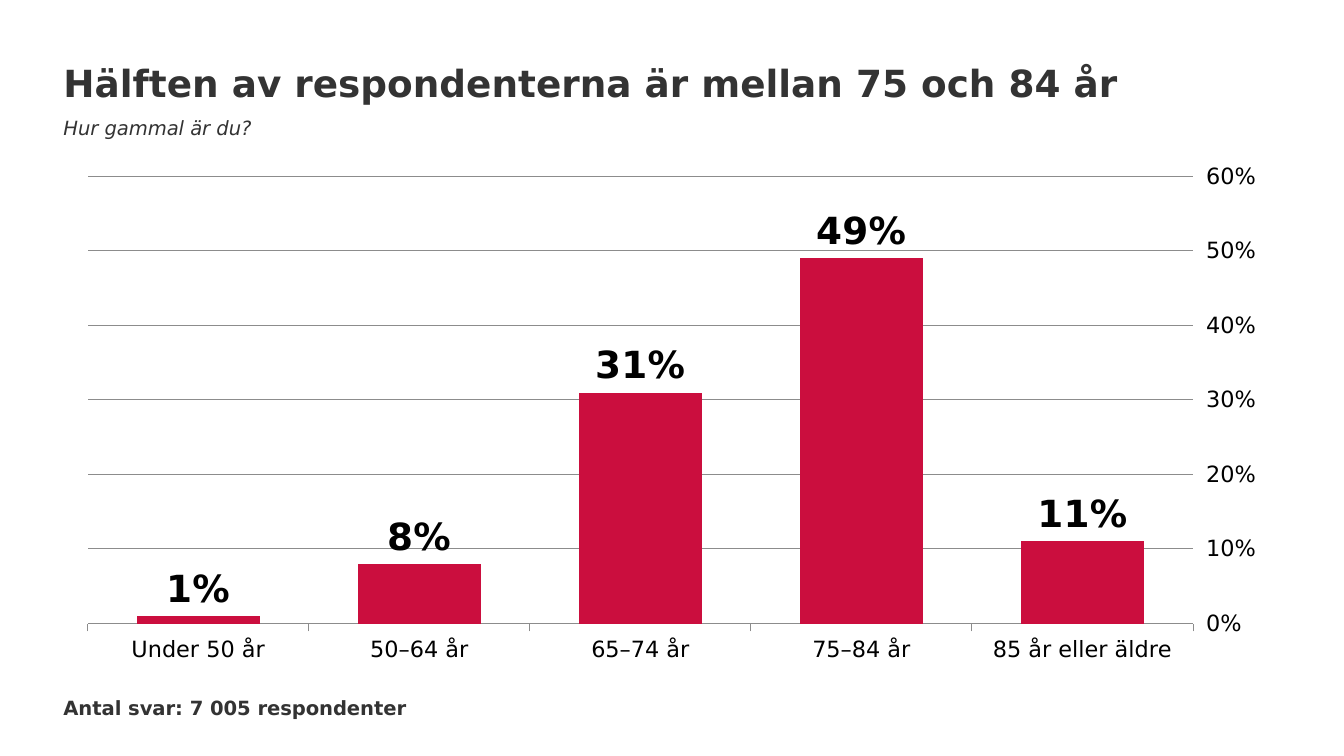
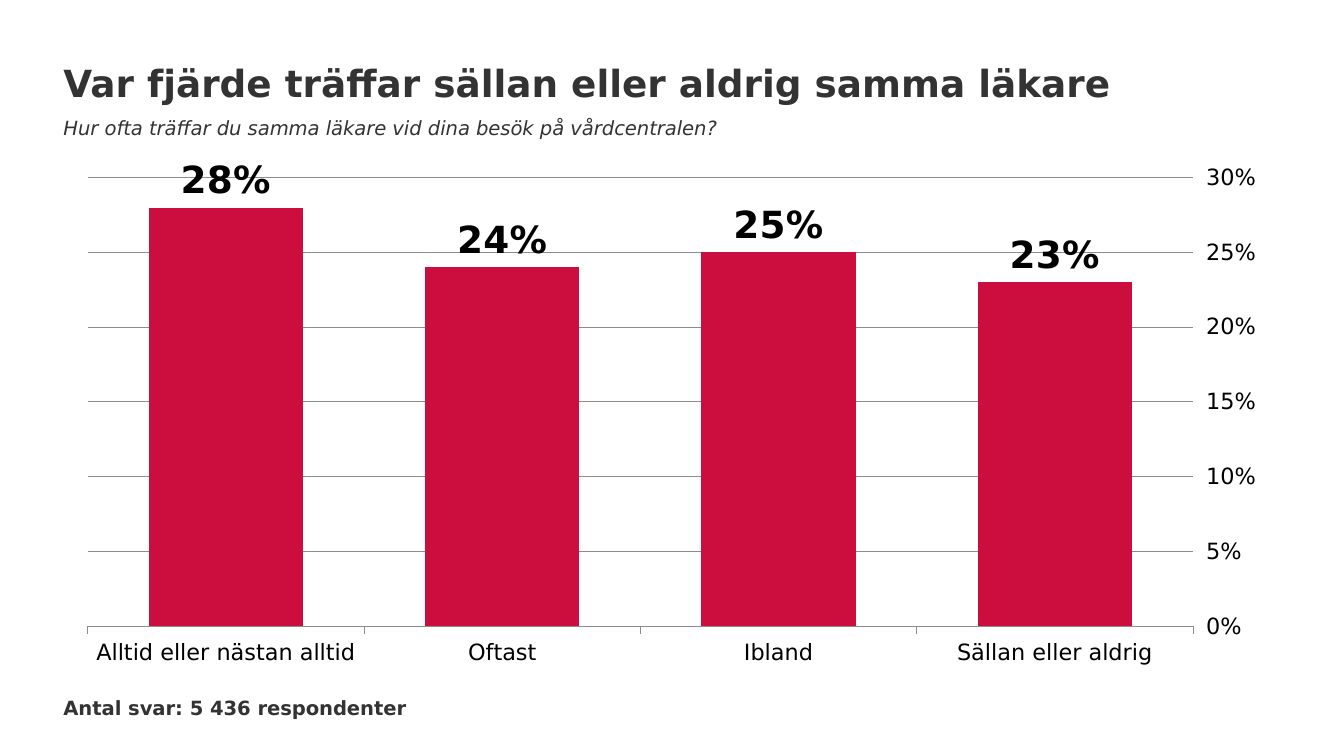
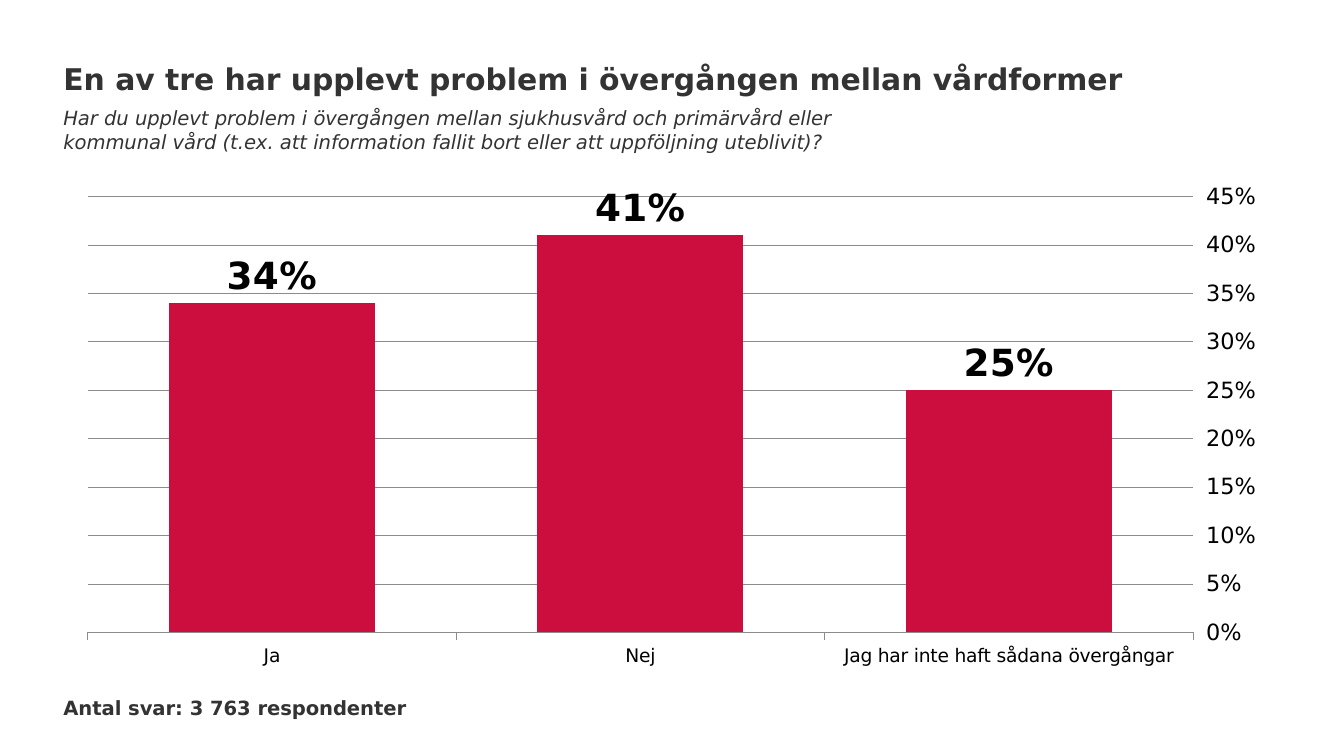
from dataclasses import dataclass

from pptx import Presentation
from pptx.chart.data import CategoryChartData
from pptx.dml.color import RGBColor
from pptx.enum.chart import (XL_CHART_TYPE, XL_LABEL_POSITION,
                             XL_TICK_LABEL_POSITION, XL_TICK_MARK)
from pptx.enum.text import MSO_ANCHOR, MSO_AUTO_SIZE, PP_ALIGN
from pptx.slide import Slide
from pptx.text.text import Font
from pptx.util import Pt

FONT = "DejaVu Sans"
BLACK = RGBColor(0x00, 0x00, 0x00)
TEXT_GREY = RGBColor(0x33, 0x33, 0x33)
LINE_GREY = RGBColor(0x8C, 0x8C, 0x8C)
BAR_RED = RGBColor(0xCB, 0x0E, 0x3E)

LEFT = 34
CONTENT_WIDTH = 652
TITLE_TOP = 32.4
COUNT_TOP = 373
COUNT_WIDTH = 212
NOTE_SIZE = 10.5
LINE_HEIGHT = 12.6
PERCENT = "0%"


@dataclass(frozen=True)
class SurveyQuestion:
    headline: str
    question: str
    respondents: str
    answers: dict[str, float]
    chart_top: float
    chart_height: float
    headline_size: float = 20
    headline_height: float = 24.5
    question_top: float = 62
    question_width: float = CONTENT_WIDTH
    question_lines: int = 1
    answer_size: float = 12


QUESTIONS = [
    SurveyQuestion(
        "Hälften av respondenterna är mellan 75 och 84 år",
        "Hur gammal är du?",
        "7 005",
        {"Under 50 år": 0.01, "50–64 år": 0.08, "65–74 år": 0.31,
         "75–84 år": 0.49, "85 år eller äldre": 0.11},
        chart_top=81.8, chart_height=279.2,
    ),
    SurveyQuestion(
        "Var fjärde träffar sällan eller aldrig samma läkare",
        "Hur ofta träffar du samma läkare vid dina besök på vårdcentralen?",
        "5 436",
        {"Alltid eller nästan alltid": 0.28, "Oftast": 0.24,
         "Ibland": 0.25, "Sällan eller aldrig": 0.23},
        chart_top=82.5, chart_height=280,
    ),
    SurveyQuestion(
        "En av tre har upplevt problem i övergången mellan vårdformer",
        "Har du upplevt problem i övergången mellan sjukhusvård och primärvård "
        "eller kommunal vård (t.ex. att information fallit bort eller att "
        "uppföljning uteblivit)?",
        "3 763",
        {"Ja": 0.34, "Nej": 0.41, "Jag har inte haft sådana övergångar": 0.25},
        chart_top=92.8, chart_height=269.8,
        headline_size=16, headline_height=19.5,
        question_top=57, question_width=451.4, question_lines=2,
        answer_size=10,
    ),
]


def style_font(font: Font, size: float, color: RGBColor,
               bold: bool = False, italic: bool = False) -> None:
    font.name = FONT
    font.size = Pt(size)
    font.bold = bold
    font.italic = italic
    font.color.rgb = color


def write_text(holder, text: str, size: float,
               bold: bool = False, italic: bool = False) -> None:
    """Fill a text box or placeholder with one tight, left-aligned run."""
    frame = holder.text_frame
    frame.margin_left = frame.margin_top = 0
    frame.margin_right = frame.margin_bottom = 0
    frame.vertical_anchor = MSO_ANCHOR.TOP
    frame.word_wrap = True
    frame.auto_size = MSO_AUTO_SIZE.SHAPE_TO_FIT_TEXT
    paragraph = frame.paragraphs[0]
    paragraph.alignment = PP_ALIGN.LEFT
    run = paragraph.add_run()
    run.text = text
    style_font(run.font, size, TEXT_GREY, bold, italic)


def add_headline(slide: Slide, survey: SurveyQuestion) -> None:
    title = slide.shapes.title
    title.left, title.top = Pt(LEFT), Pt(TITLE_TOP)
    title.width, title.height = Pt(CONTENT_WIDTH), Pt(survey.headline_height)
    write_text(title, survey.headline, survey.headline_size, bold=True)


def add_note(slide: Slide, text: str, top: float, width: float, lines: int = 1,
             bold: bool = False, italic: bool = False) -> None:
    note = slide.shapes.add_textbox(Pt(LEFT), Pt(top), Pt(width), Pt(lines * LINE_HEIGHT))
    write_text(note, text, NOTE_SIZE, bold, italic)


def add_answer_chart(slide: Slide, survey: SurveyQuestion) -> None:
    data = CategoryChartData(number_format=PERCENT)
    data.categories = list(survey.answers)
    data.add_series("Series 1", list(survey.answers.values()))
    chart = slide.shapes.add_chart(
        XL_CHART_TYPE.COLUMN_CLUSTERED, Pt(LEFT), Pt(survey.chart_top),
        Pt(CONTENT_WIDTH), Pt(survey.chart_height), data).chart
    chart.has_legend = False
    chart.has_title = False
    style_font(chart.font, 12, BLACK)

    answer_axis = chart.category_axis
    answer_axis.tick_label_position = XL_TICK_LABEL_POSITION.LOW
    style_font(answer_axis.tick_labels.font, survey.answer_size, BLACK)

    share_axis = chart.value_axis
    share_axis.minimum_scale = 0
    share_axis.tick_label_position = XL_TICK_LABEL_POSITION.HIGH
    share_axis.tick_labels.number_format = PERCENT
    share_axis.tick_labels.number_format_is_linked = False
    share_axis.format.line.fill.background()
    style_font(share_axis.tick_labels.font, 12, BLACK)

    for axis in (answer_axis, share_axis):
        axis.major_tick_mark = XL_TICK_MARK.OUTSIDE
        axis.minor_tick_mark = XL_TICK_MARK.NONE
    for line in (answer_axis.format.line, share_axis.major_gridlines.format.line):
        line.color.rgb = LINE_GREY
        line.width = Pt(0.5)

    plot = chart.plots[0]
    plot.gap_width = 79
    plot.vary_by_categories = False
    bars = plot.series[0]
    bars.format.fill.solid()
    bars.format.fill.fore_color.rgb = BAR_RED
    labels = bars.data_labels
    labels.show_value = True
    labels.position = XL_LABEL_POSITION.OUTSIDE_END
    labels.number_format = PERCENT
    labels.number_format_is_linked = False
    style_font(labels.font, 20, BLACK, bold=True)


def main() -> None:
    deck = Presentation()
    deck.slide_width, deck.slide_height = Pt(720), Pt(405)
    title_only = deck.slide_layouts.get_by_name("Title Only")
    for survey in QUESTIONS:
        slide = deck.slides.add_slide(title_only)
        add_headline(slide, survey)
        add_answer_chart(slide, survey)
        add_note(slide, f"Antal svar: {survey.respondents} respondenter",
                 COUNT_TOP, COUNT_WIDTH, bold=True)
        add_note(slide, survey.question, survey.question_top,
                 survey.question_width, survey.question_lines, italic=True)
    deck.save("out.pptx")


if __name__ == "__main__":
    main()
